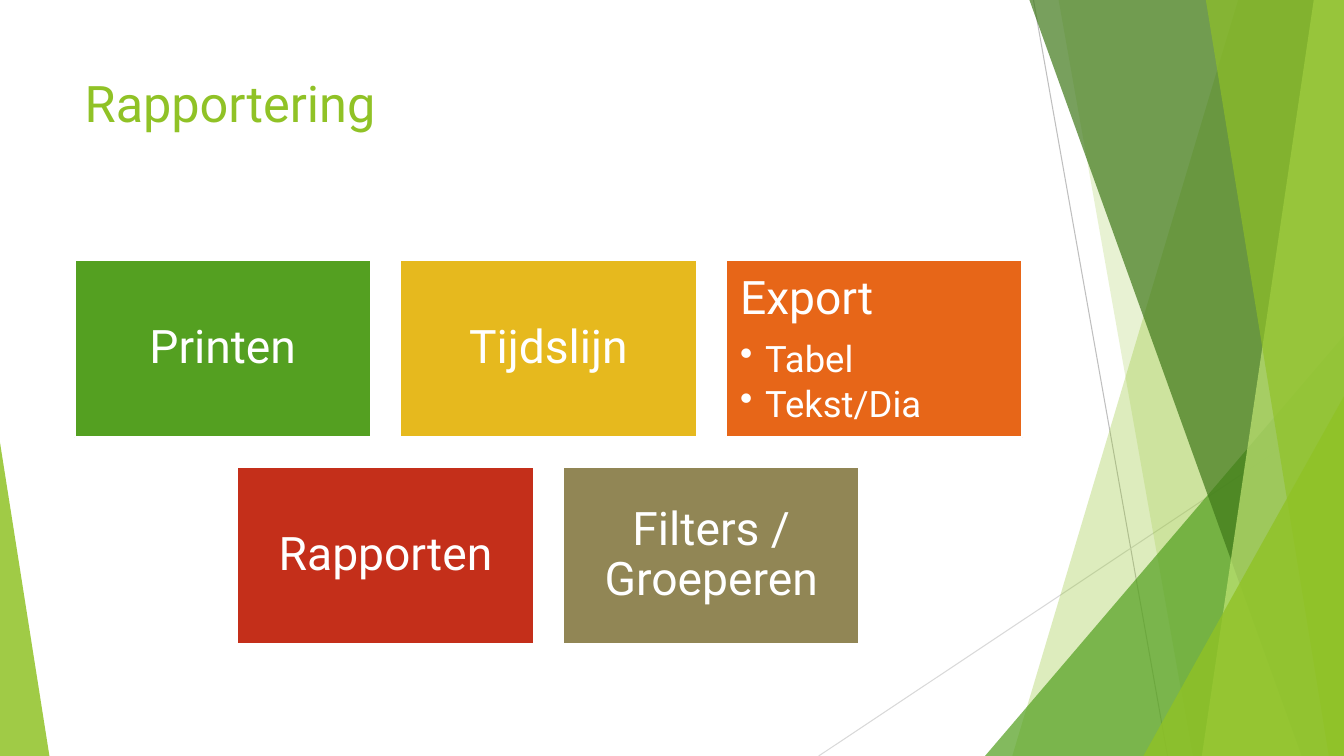
from lxml import etree
from pptx import Presentation
from pptx.dml.color import RGBColor
from pptx.enum.shapes import MSO_CONNECTOR as Connector, MSO_SHAPE as Shape
from pptx.enum.text import MSO_ANCHOR as Anchor, PP_ALIGN as Align
from pptx.oxml.ns import qn
from pptx.util import Inches, Pt

FONT = "Roboto"
PAGE_W, PAGE_H = 13.33, 7.5
COLORS = {
    "white": "FFFFFF", "lime": "90C226", "pale": "C0E474",
    "green": "54A021", "forest": "3F7819", "yellow": "E6B91E",
    "orange": "E76618", "red": "C42F1A", "olive": "918655",
    "grey": "BFBFBF", "silver": "D9D9D9",
}

# Tile grid
TILE_W, TILE_H = 2.94, 1.76
STEP_X, STEP_Y = 3.23, 2.05
GRID_LEFT, GRID_TOP, COLUMNS = 0.74, 2.58, 3
TILE_ROWS = [
    [("Printen", "green", []), ("Tijdslijn", "yellow", []),
     ("Export", "orange", ["Tabel", "Tekst/Dia"])],
    [("Rapporten", "red", []), ("Filters / Groeperen", "olive", [])],
]


def color(name):
    return RGBColor.from_string(COLORS[name])


def fill_shape(shape, name, opacity=100):
    shape.shadow.inherit = False
    shape.fill.solid()
    shape.fill.fore_color.rgb = color(name)
    shape.line.fill.background()
    if opacity < 100:
        tint = shape.fill._xPr.find(qn("a:solidFill"))[0]
        etree.SubElement(tint, qn("a:alpha"), val=str(opacity * 1000))


def add_line(page, start, end, name):
    line = page.shapes.add_connector(
        Connector.STRAIGHT, *(Inches(value) for value in start + end))
    line.line.color.rgb = color(name)
    line.line.width = Pt(0.75)
    etree.SubElement(line._element.spPr, qn("a:effectLst"))


def add_band(page, top_x, bottom_x, name, opacity):
    """Full-height band from a slanted left edge to the right page edge."""
    builder = page.shapes.build_freeform(Inches(top_x), 0)
    corners = [(PAGE_W, 0), (PAGE_W, PAGE_H), (bottom_x, PAGE_H)]
    builder.add_line_segments([(Inches(x), Inches(y)) for x, y in corners])
    fill_shape(builder.convert_to_shape(), name, opacity)


def add_corner(page, left, top, width, apex, name, opacity):
    """Right triangle standing on the bottom page edge."""
    corner = page.shapes.add_shape(
        Shape.ISOSCELES_TRIANGLE, Inches(left), Inches(top),
        Inches(width), Inches(PAGE_H - top))
    corner.adjustments[0] = apex
    fill_shape(corner, name, opacity)


def format_paragraph(para, size, name, align=Align.LEFT):
    para.alignment = align
    para.font.name = FONT
    para.font.size = Pt(size)
    para.font.color.rgb = color(name)


def add_bullet(frame, text):
    para = frame.add_paragraph()
    para.text = text
    para.level = 1
    format_paragraph(para, 26, "white")
    para.line_spacing = 0.9
    para.space_after = Pt(4)
    props = para._p.get_or_add_pPr()
    props.set("marL", str(Inches(0.25)))
    props.set("indent", str(Inches(-0.25)))
    mark = etree.Element(qn("a:buChar"), char="•")
    props.find(qn("a:defRPr")).addprevious(mark)


def add_tile(page, left, top, text, name, bullets):
    tile = page.shapes.add_shape(
        Shape.RECTANGLE, Inches(left), Inches(top),
        Inches(TILE_W), Inches(TILE_H))
    fill_shape(tile, name)
    tile.line.color.rgb = color("white")
    tile.line.width = Pt(1.5)
    frame = tile.text_frame
    frame.word_wrap = True
    frame.margin_left = frame.margin_right = Inches(0.14)
    frame.margin_top = frame.margin_bottom = Inches(0.14)
    frame.vertical_anchor = Anchor.TOP if bullets else Anchor.MIDDLE
    para = frame.paragraphs[0]
    para.text = text
    format_paragraph(para, 33, "white", Align.LEFT if bullets else Align.CENTER)
    para.line_spacing = 0.9
    para.space_after = Pt(12)
    for bullet in bullets:
        add_bullet(frame, bullet)


def add_title(page, text):
    title = page.shapes.title
    title.left, title.top = Inches(0.74), Inches(0.67)
    title.width, title.height = Inches(9.4), Inches(1.44)
    title.text_frame.text = text
    title.text_frame.vertical_anchor = Anchor.TOP
    format_paragraph(title.text_frame.paragraphs[0], 36, "lime")


def add_decoration(page):
    add_line(page, (10.25, 0), (11.58, PAGE_H), "grey")
    add_line(page, (PAGE_W, 4.03), (8.12, PAGE_H), "silver")
    add_band(page, 12.28, 10.04, "lime", 30)
    add_band(page, 10.5, 11.83, "lime", 20)
    add_corner(page, 9.77, 3.33, 3.56, 1, "green", 72)
    add_band(page, 10.21, 12.91, "forest", 70)
    add_band(page, 13.03, 11.92, "pale", 70)
    add_band(page, 11.96, 13.18, "lime", 65)
    add_corner(page, 11.34, 3.93, 1.99, 1, "lime", 80)
    add_corner(page, 0, 4.39, 0.49, 0, "lime", 85)


def add_tiles(page):
    for row, tiles in enumerate(TILE_ROWS):
        # A shorter row is centred under the full one
        row_left = GRID_LEFT + (COLUMNS - len(tiles)) * STEP_X / 2
        for column, tile in enumerate(tiles):
            add_tile(page, row_left + column * STEP_X,
                     GRID_TOP + row * STEP_Y, *tile)


def main():
    deck = Presentation()
    deck.slide_width, deck.slide_height = Inches(PAGE_W), Inches(PAGE_H)
    page = deck.slides.add_slide(deck.slide_layouts[5])
    add_decoration(page)
    add_title(page, "Rapportering")
    add_tiles(page)
    deck.save("out.pptx")


if __name__ == "__main__":
    main()
